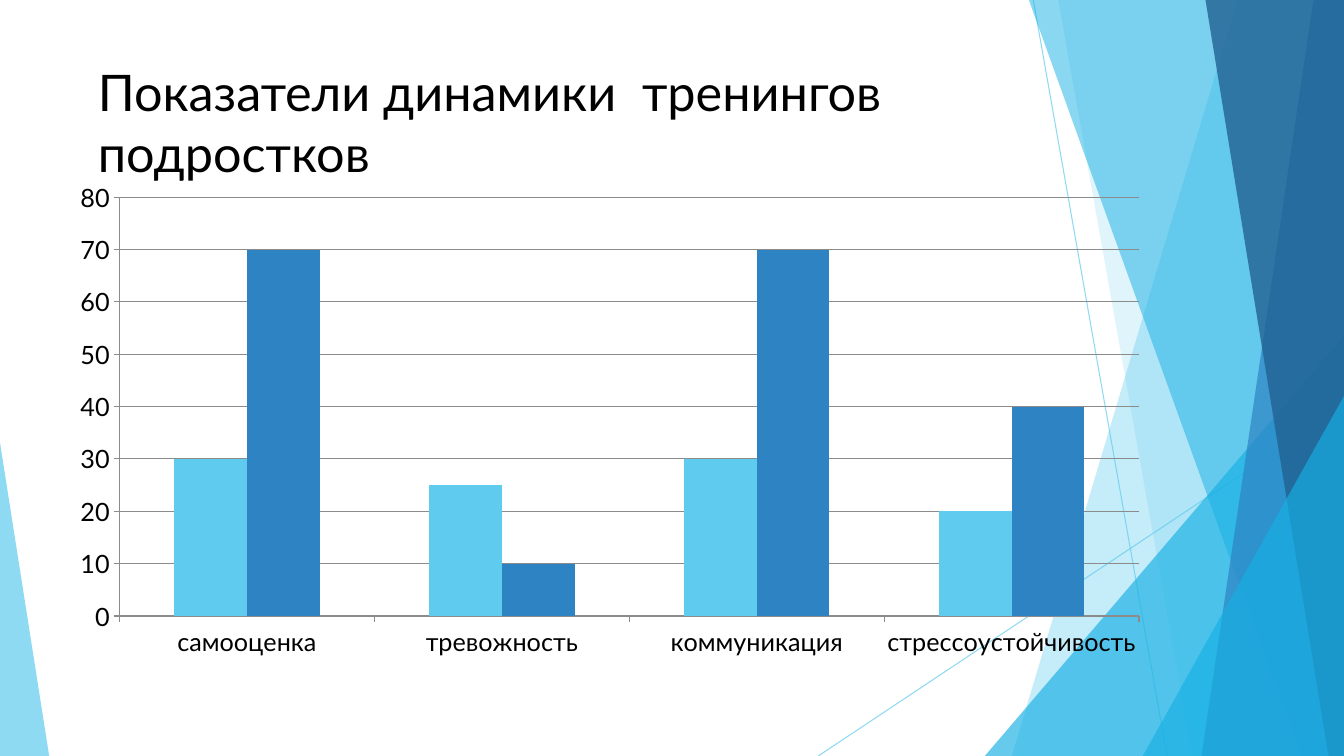
from lxml import etree
from pptx import Presentation
from pptx import util as u
from pptx.chart.data import CategoryChartData
from pptx.dml.color import RGBColor
from pptx.enum import chart as charts, shapes, text
from pptx.oxml.ns import qn

# Content; lengths in centimetres
WIDTH, HEIGHT = 33.87, 19.05
FONT = "Lato"
TITLE = "Показатели динамики  тренингов подростков"
CATEGORIES = ["самооценка", "тревожность", "коммуникация", "стрессоустойчивость"]
SERIES = [
    ("Series 1", [30, 25, 30, 20], "5FCBEF"),
    ("Series 2", [70, 10, 70, 40], "2E83C3"),
]
TITLE_BOX = (2.21, 1.42, 23.88, 3.66)
CHART_BOX = (1.47, 4.34, 27.79, 12.45)

# Background: thin lines as x1, y1, x2, y2
LINES = [(26.04, 0, 29.41, HEIGHT), (WIDTH, 10.24, 20.62, HEIGHT)]
# Bands reach the right edge: top x, bottom x, colour, opacity
# Triangles stand on the bottom edge: left, top, width, apex, colour, opacity
DECOR = [
    ("band", 31.19, 25.5, "5FCBEF", 36),
    ("band", 26.67, 30.05, "5FCBEF", 20),
    ("triangle", 24.82, 8.46, 9.05, 1, "17B0E4", 66),
    ("band", 25.93, 32.79, "17B0E4", 50),
    ("band", 33.1, 30.28, "2E83C3", 70),
    ("band", 30.38, 33.48, "226292", 80),
    ("triangle", 28.8, 9.98, 5.07, 1, "17B0E4", 66),
    ("triangle", 0, 11.15, 1.24, 0, "5FCBEF", 70),
]


def colour(value):
    return RGBColor.from_string(value)


def cm(values):
    return [u.Cm(value) for value in values]


def set_opacity(part, percent):
    for tone in part._element.spPr.iter(qn("a:srgbClr")):
        etree.SubElement(tone, qn("a:alpha")).set("val", str(percent * 1000))


def paint(shape, value, percent):
    shape.shadow.inherit = False
    shape.line.fill.background()
    shape.fill.solid()
    shape.fill.fore_color.rgb = colour(value)
    set_opacity(shape, percent)


def add_line(page, ends):
    line = page.shapes.add_connector(shapes.MSO_CONNECTOR.STRAIGHT, *cm(ends))
    line.line.color.rgb = colour("5FCBEF")
    line.line.width = u.Pt(0.75)
    set_opacity(line, 70)
    etree.SubElement(line._element.spPr, qn("a:effectLst"))


def add_band(page, top_x, bottom_x, value, percent):
    corners = [(WIDTH, 0), (WIDTH, HEIGHT), (bottom_x, HEIGHT)]
    builder = page.shapes.build_freeform(u.Cm(top_x), 0)
    builder.add_line_segments([cm(corner) for corner in corners], close=True)
    paint(builder.convert_to_shape(), value, percent)


def add_triangle(page, left, top, width, apex, value, percent):
    triangle = page.shapes.add_shape(
        shapes.MSO_SHAPE.ISOSCELES_TRIANGLE, *cm((left, top, width, HEIGHT - top)))
    triangle.adjustments[0] = apex
    paint(triangle, value, percent)


def add_title(page):
    title = page.shapes.title
    title.left, title.top, title.width, title.height = cm(TITLE_BOX)
    frame = title.text_frame
    frame.word_wrap = True
    frame.auto_size = text.MSO_AUTO_SIZE.NONE
    frame.vertical_anchor = text.MSO_ANCHOR.TOP
    para = frame.paragraphs[0]
    para.alignment = text.PP_ALIGN.LEFT
    para.line_spacing = 1.0
    para.space_before = u.Pt(0)
    span = para.add_run()
    span.text = TITLE
    span.font.name = FONT
    span.font.size = u.Pt(36)
    span.font.color.rgb = colour("000000")
    # Bring the title in front of the background
    page.shapes._spTree.append(title._element)


def add_bars(page):
    data = CategoryChartData()
    data.categories = CATEGORIES
    for name, values, _ in SERIES:
        data.add_series(name, values)
    chart = page.shapes.add_chart(
        charts.XL_CHART_TYPE.COLUMN_CLUSTERED, *cm(CHART_BOX), data).chart
    chart.has_legend = False
    chart.has_title = False
    chart.font.name = FONT
    chart.font.size = u.Pt(18)
    chart.font.color.rgb = colour("000000")

    plot = chart.plots[0]
    plot.gap_width = 150
    plot.overlap = 0
    plot.vary_by_categories = False
    for series, (_, _, value) in zip(plot.series, SERIES):
        series.format.fill.solid()
        series.format.fill.fore_color.rgb = colour(value)

    scale = chart.value_axis
    scale.minimum_scale, scale.maximum_scale, scale.major_unit = 0, 80, 10
    scale.has_major_gridlines = True
    for axis in (chart.category_axis, scale):
        axis.major_tick_mark = charts.XL_TICK_MARK.OUTSIDE
        axis.minor_tick_mark = charts.XL_TICK_MARK.NONE
    for part in (chart.category_axis, scale, scale.major_gridlines):
        part.format.line.color.rgb = colour("8B8B8B")
        part.format.line.width = u.Pt(0.75)


def main():
    deck = Presentation()
    deck.slide_width, deck.slide_height = cm((WIDTH, HEIGHT))
    page = deck.slides.add_slide(deck.slide_layouts[5])
    for ends in LINES:
        add_line(page, ends)
    draw = {"band": add_band, "triangle": add_triangle}
    for kind, *details in DECOR:
        draw[kind](page, *details)
    add_title(page)
    add_bars(page)
    deck.save("out.pptx")


if __name__ == "__main__":
    main()
